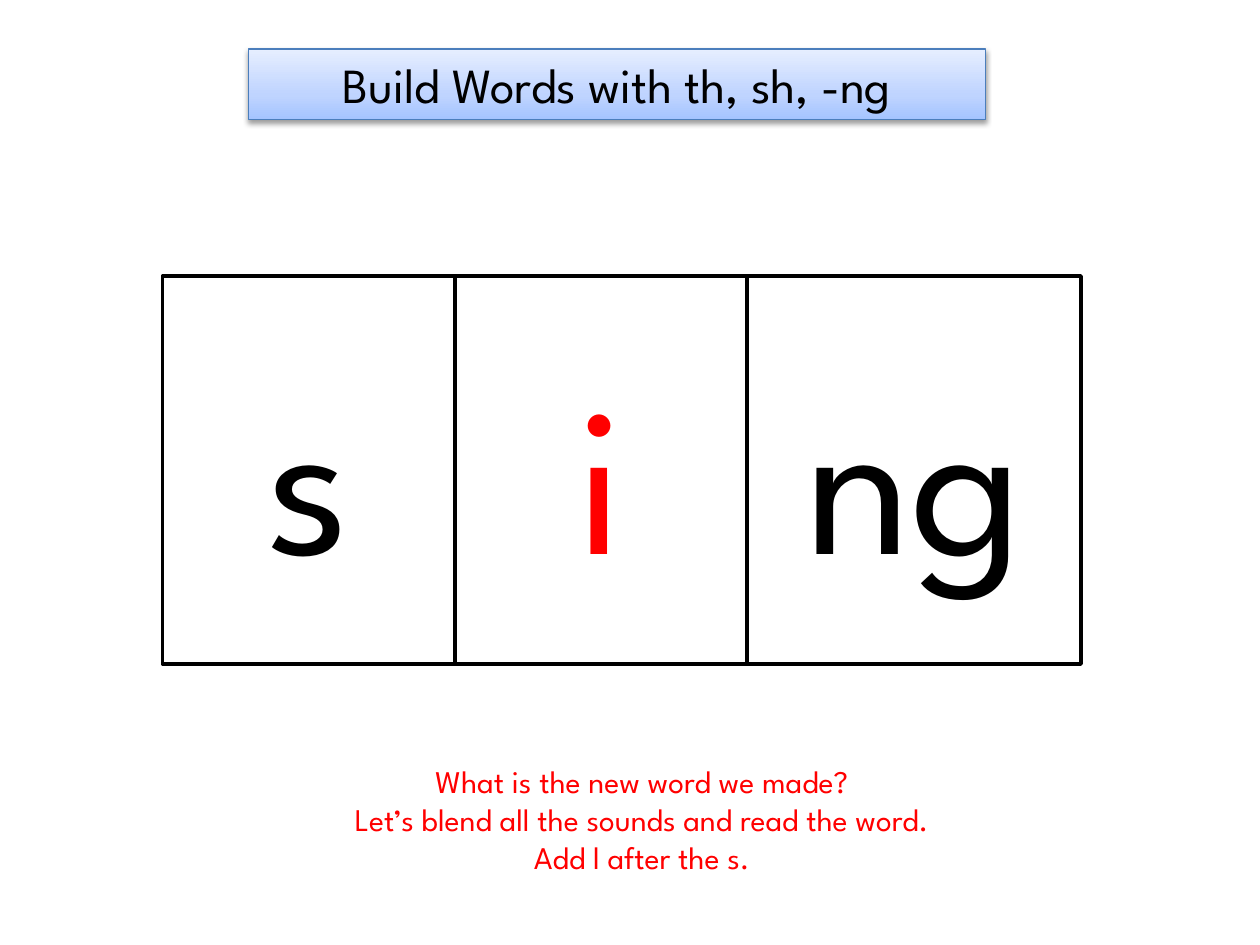
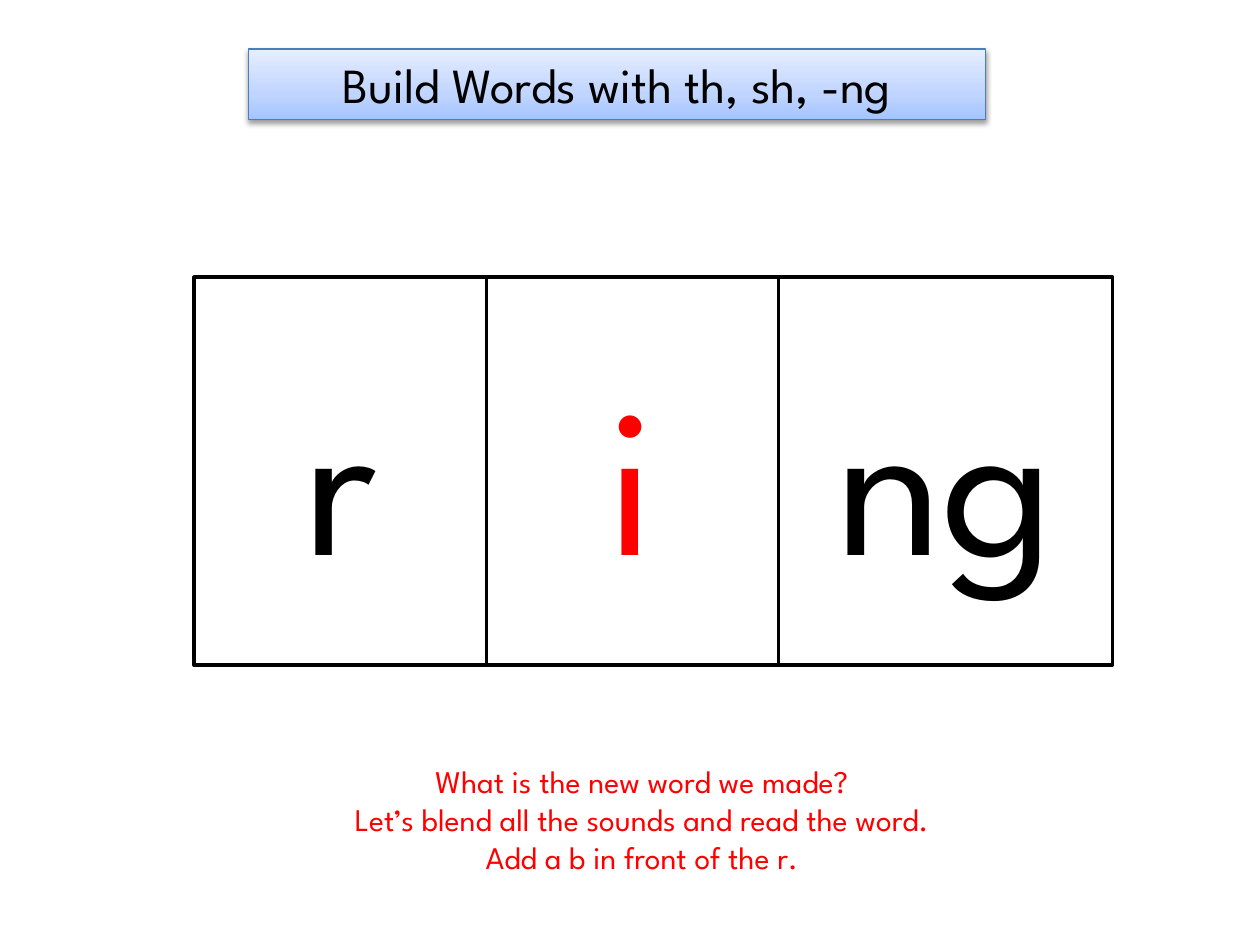
import copy

import lxml.etree
import pptx
import pptx.dml.color
import pptx.enum.shapes
import pptx.enum.text
import pptx.oxml
import pptx.oxml.ns
import pptx.util

Inches = pptx.util.Inches
Pt = pptx.util.Pt
RGBColor = pptx.dml.color.RGBColor
RECTANGLE = pptx.enum.shapes.MSO_SHAPE.RECTANGLE

BLACK = RGBColor(0x00, 0x00, 0x00)
WHITE = RGBColor(0xFF, 0xFF, 0xFF)
RED = RGBColor(0xFF, 0x00, 0x00)
BANNER_LINE = RGBColor(0x4B, 0x7E, 0xBC)
BANNER_STOPS = [
    (0, RGBColor(0xA4, 0xC4, 0xFF)),
    (0.35, RGBColor(0xBF, 0xD4, 0xFF)),
    (1, RGBColor(0xE6, 0xEE, 0xFF)),
]
BANNER_SHADOW = (
    '<a:outerShdw xmlns:a="http://schemas.openxmlformats.org/drawingml/2006/main"'
    ' blurRad="39370" dist="20320" dir="5400000" rotWithShape="0">'
    '<a:srgbClr val="000000"><a:alpha val="38000"/></a:srgbClr></a:outerShdw>'
)
FONT = "League Spartan"
TITLE = "Build Words with th, sh, -ng"
PROMPTS = ["What is the new word we made?", "Let’s blend all the sounds and read the word."]
TILE_WIDTHS = [2.32, 2.32, 2.65]
TILE_HEIGHT = 3.08

# first letter, left and top of the tiles, next step
WORDS = [
    ("s", 1.29, 2.19, "Add l after the s."),
    ("r", 1.54, 2.2, "Add a b in front of the r."),
]


def write_lines(shape, lines, size, color):
    """Fill the shape with centred paragraphs in the lesson font."""
    frame = shape.text_frame
    frame.word_wrap = True
    frame.text = "\n".join(lines)
    for para in frame.paragraphs:
        para.alignment = pptx.enum.text.PP_ALIGN.CENTER
        para.font.name = FONT
        para.font.size = Pt(size)
        para.font.color.rgb = color


def add_box(page, left, top, width, height, line_color, line_width):
    """Add a white, shadowless rectangle with text anchored in the middle."""
    box = page.shapes.add_shape(
        RECTANGLE, Inches(left), Inches(top), Inches(width), Inches(height))
    box.shadow.inherit = False
    box.fill.solid()
    box.fill.fore_color.rgb = WHITE
    box.line.color.rgb = line_color
    box.line.width = Pt(line_width)
    box.text_frame.vertical_anchor = pptx.enum.text.MSO_ANCHOR.MIDDLE
    return box


deck = pptx.Presentation()
deck.slide_width = Inches(10)
deck.slide_height = Inches(7.5)

for first_letter, tiles_left, tiles_top, next_step in WORDS:
    page = deck.slides.add_slide(deck.slide_layouts[6])

    # Title banner: three-stop gradient and a soft shadow below
    banner = add_box(page, 1.97, 0.39, 5.85, 0.56, BANNER_LINE, 0.75)
    banner.fill.gradient()
    banner.fill.gradient_angle = 90
    properties = banner._element.spPr
    stop_list = properties.find(".//" + pptx.oxml.ns.qn("a:gsLst"))
    stop_list.append(copy.deepcopy(stop_list[0]))
    for stop, (position, color) in zip(banner.fill.gradient_stops, BANNER_STOPS):
        stop.position = position
        stop.color.rgb = color
    effects = properties.find(pptx.oxml.ns.qn("a:effectLst"))
    effects.append(pptx.oxml.parse_xml(BANNER_SHADOW))
    write_lines(banner, [TITLE], 28, BLACK)

    # Letter tiles, side by side, with the vowel in red
    sounds = [first_letter, "i", "ng"]
    for index, (sound, width) in enumerate(zip(sounds, TILE_WIDTHS)):
        left = tiles_left + sum(TILE_WIDTHS[:index])
        tile = add_box(page, left, tiles_top, width, TILE_HEIGHT, BLACK, 2)
        write_lines(tile, [sound], 120, RED if sound == "i" else BLACK)

    # Teacher prompts
    prompt_box = page.shapes.add_textbox(
        Inches(1.61), Inches(6), Inches(6.97), Inches(1.01))
    write_lines(prompt_box, PROMPTS + [next_step], 18, RED)
    prompt_box.text_frame.auto_size = pptx.enum.text.MSO_AUTO_SIZE.SHAPE_TO_FIT_TEXT

deck.save("out.pptx")
